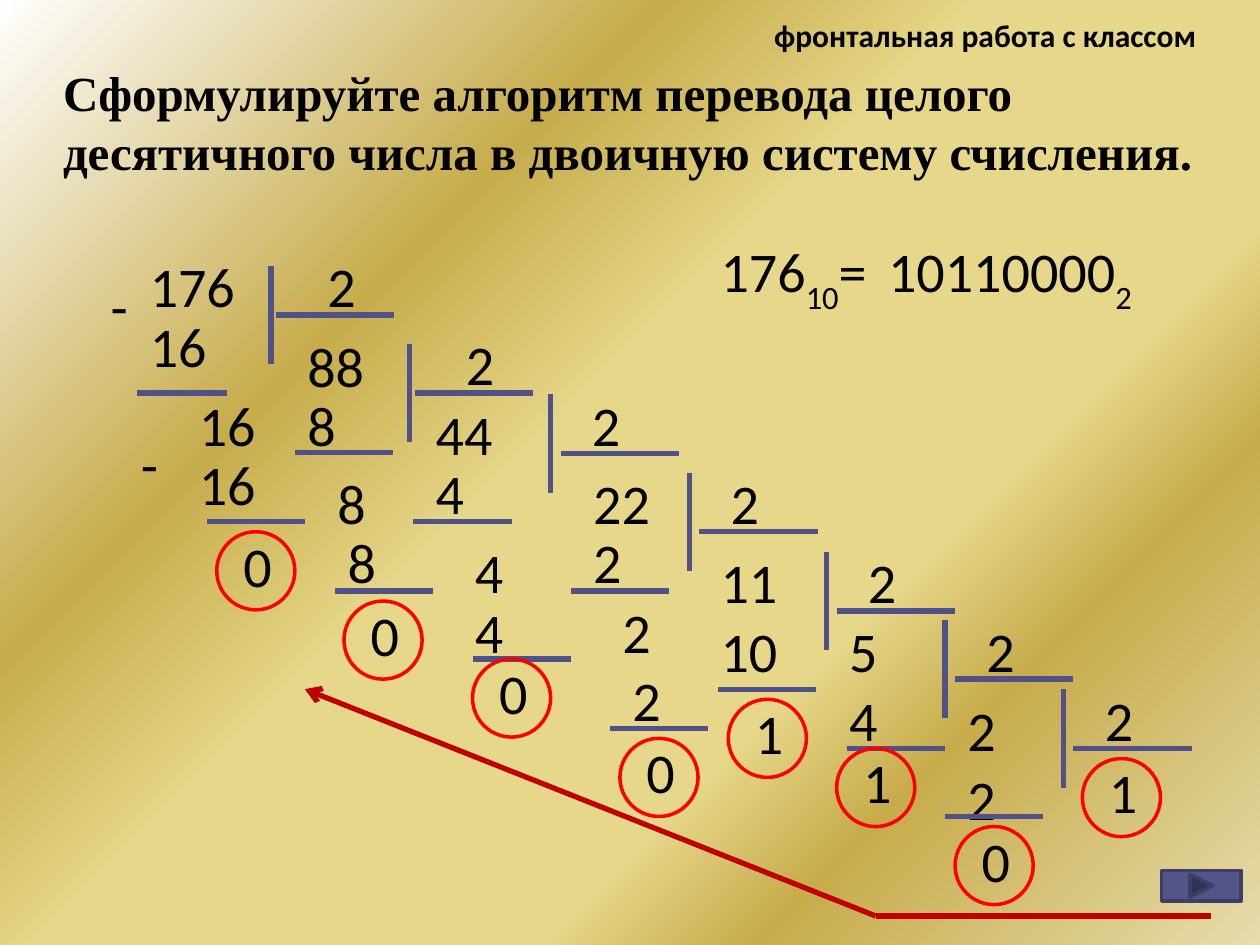
import pptx
import pptx.dml.color
import pptx.enum.shapes
import pptx.enum.text
import pptx.oxml
import pptx.oxml.ns
import pptx.util
from lxml import etree

Inches = pptx.util.Inches
Pt = pptx.util.Pt
ALIGN = pptx.enum.text.PP_ALIGN
ANCHOR = pptx.enum.text.MSO_ANCHOR
SHAPES = pptx.enum.shapes.MSO_SHAPE

COLORS = {
    "text": "000000", "rule": "505188", "ring": "FF0000", "arrow": "C00000",
    "button": "53548A", "button_line": "3D3E66",
    "white": "FFFFFF", "gold": "C7AC4C", "straw": "E6D78A", "sand": "E6DCAC",
}
BACKGROUND_STOPS = [(0, "white", 100), (30, "gold", 100), (45, "straw", 100),
                    (67, "straw", 42), (77, "gold", 100), (100, "sand", 100)]
DIGIT_WIDTH, DIGIT_HEIGHT, RULE_WIDTH, BAR_HEIGHT, RING_SIZE = 0.78, 0.64, 0.78, 0.78, 0.62
LONG_NUMBER_SIZE = 1.18

WIDE_CORNER = {"gap": 0.04, "drop": 0.39, "divisor": (0.35, -0.16)}
NARROW_CORNER = {"gap": 0.08, "drop": 0.47, "divisor": (0.23, -0.08)}
DIVISIONS = [
    {"at": (1.09, 1.95), "bar": (1.06, 0.16), "corner": WIDE_CORNER,
     "digits": [("176", 0, 0), ("16", 0, 0.47), ("16", 0.39, 1.1), ("16", 0.39, 1.57)],
     "minuses": [(-0.31, 0.16), (-0.07, 1.41)],
     "rules": [(0, 1.17, 0.71), (0.55, 2.19, RULE_WIDTH)], "remainder": ("0", 0.63, 2.27)},
    {"at": (2.34, 2.58), "bar": (0.91, 0.15), "corner": WIDE_CORNER,
     "digits": [("88", 0, 0), ("8", 0, 0.47), ("8", 0.24, 1.09), ("8", 0.32, 1.56)],
     "rules": [(0, 1.01, RULE_WIDTH), (0.32, 2.11, RULE_WIDTH)], "remainder": ("0", 0.39, 2.19)},
    {"at": (3.36, 3.12), "bar": (1.01, 0.01), "corner": NARROW_CORNER,
     "digits": [("44", 0, 0), ("4", 0, 0.47), ("4", 0.31, 1.1), ("4", 0.31, 1.57)],
     "rules": [(-0.08, 1.02, RULE_WIDTH), (0.39, 2.11, RULE_WIDTH)], "remainder": ("0", 0.39, 2.11)},
    {"at": (4.61, 3.67), "bar": (0.86, 0.08), "corner": NARROW_CORNER,
     "digits": [("22", 0, 0), ("2", 0, 0.47), ("2", 0.23, 1.02), ("2", 0.31, 1.56)],
     "rules": [(-0.08, 1.02, RULE_WIDTH), (0.23, 2.11, RULE_WIDTH)], "remainder": ("0", 0.31, 2.19)},
    {"at": (5.62, 4.3), "bar": (0.94, 0.08), "corner": NARROW_CORNER,
     "digits": [("11", 0, 0), ("10", 0, 0.54)],
     "rules": [(0.08, 1.17, RULE_WIDTH)], "remainder": ("1", 0.16, 1.25)},
    {"at": (6.64, 4.84), "bar": (0.86, 0.08), "corner": NARROW_CORNER,
     "digits": [("5", 0, 0), ("4", 0, 0.55)],
     "rules": [(0.08, 1.1, RULE_WIDTH)], "remainder": ("1", 0, 1.1)},
    {"at": (7.58, 5.47), "bar": (0.86, 0), "corner": NARROW_CORNER,
     "digits": [("2", 0, 0), ("2", 0, 0.55)],
     "rules": [(-0.08, 1.01, RULE_WIDTH)], "remainder": ("0", 0, 1.09)},
]


def rgb(name):
    """Return the named colour."""
    return pptx.dml.color.RGBColor.from_string(COLORS[name])


def write_text(shape, text, subscript="", suffix="", size=32, font="Calibri", bold=False,
               align=ALIGN.LEFT, anchor=ANCHOR.TOP, wrap=True, grow=True):
    """Write one formatted paragraph, optionally with a subscript and a suffix."""
    frame = shape.text_frame
    frame.word_wrap = wrap
    frame.vertical_anchor = anchor
    sizes = pptx.enum.text.MSO_AUTO_SIZE
    frame.auto_size = sizes.SHAPE_TO_FIT_TEXT if grow else sizes.NONE
    paragraph = frame.paragraphs[0]
    paragraph.alignment = align
    for part, baseline in ((text, 0), (subscript, -30000), (suffix, 0)):
        if part:
            run = paragraph.add_run()
            run.text = part
            run.font.size = Pt(size)
            run.font.name = font
            run.font.bold = bold
            run.font.color.rgb = rgb("text")
            if baseline:
                run._r.get_or_add_rPr().set("baseline", str(baseline))


def add_text(slide, text, left, top, width=DIGIT_WIDTH, height=DIGIT_HEIGHT, **text_format):
    """Add a text box with formatted text."""
    shape = slide.shapes.add_textbox(Inches(left), Inches(top), Inches(width), Inches(height))
    write_text(shape, text, **text_format)


def add_number(slide, digits, left, top):
    """Add a number in a box that is large enough to keep it on one line."""
    if len(digits) > 2:
        add_text(slide, digits, left, top, width=LONG_NUMBER_SIZE, height=LONG_NUMBER_SIZE)
    else:
        add_text(slide, digits, left, top)


def add_line(slide, start, end, color="rule", arrow=False):
    """Add a straight line, optionally with an arrowhead at its end."""
    line = slide.shapes.add_connector(pptx.enum.shapes.MSO_CONNECTOR.STRAIGHT,
                                      *(Inches(value) for value in (*start, *end)))
    line.line.color.rgb = rgb(color)
    line.line.width = Pt(3)
    if arrow:
        etree.SubElement(line.line._get_or_add_ln(), pptx.oxml.ns.qn("a:tailEnd"), type="arrow")
    etree.SubElement(line._element.spPr, pptx.oxml.ns.qn("a:effectLst"))


def add_ring(slide, digit, left, top):
    """Add a red ring around a binary digit."""
    ring = slide.shapes.add_shape(SHAPES.OVAL, Inches(left), Inches(top),
                                  Inches(RING_SIZE), Inches(RING_SIZE))
    ring.shadow.inherit = False
    ring.fill.background()
    ring.line.color.rgb = rgb("ring")
    ring.line.width = Pt(2)
    frame = ring.text_frame
    frame.margin_left, frame.margin_top = Inches(0.12), Inches(0.31)
    frame.margin_right, frame.margin_bottom = Inches(0.1), 0
    write_text(ring, digit, align=ALIGN.CENTER, anchor=ANCHOR.BOTTOM, grow=False)


def add_corner(slide, left, top, gap, drop, divisor):
    """Add the division corner with its divisor."""
    add_line(slide, (left, top), (left, top + BAR_HEIGHT))
    add_line(slide, (left + gap, top + drop), (left + gap + 0.94, top + drop))
    add_text(slide, "2", left + divisor[0], top + divisor[1], width=0.96)


def add_division(slide, division):
    """Add one step of the long division relative to its dividend."""
    left, top = division["at"]
    bar_x, bar_y = division["bar"]
    add_corner(slide, left + bar_x, top + bar_y, **division["corner"])
    for digits, x, y in division["digits"]:
        add_number(slide, digits, left + x, top + y)
    for x, y in division.get("minuses", []):
        add_text(slide, "-", left + x, top + y, width=0.35, wrap=False)
    for x, y, width in division["rules"]:
        add_line(slide, (left + x, top + y), (left + x + width, top + y))
    digit, x, y = division["remainder"]
    add_ring(slide, digit, left + x, top + y)


def set_background(slide):
    """Fill the background with the diagonal gold gradient."""
    fill = slide.background.fill
    fill.gradient()
    fill.gradient_angle = 315
    stops = slide._element.find(".//" + pptx.oxml.ns.qn("a:gsLst"))
    for stop in list(stops):
        stops.remove(stop)
    for position, color, opacity in BACKGROUND_STOPS:
        stop = etree.SubElement(stops, pptx.oxml.ns.qn("a:gs"), pos=str(position * 1000))
        tone = etree.SubElement(stop, pptx.oxml.ns.qn("a:srgbClr"), val=COLORS[color])
        if opacity < 100:
            etree.SubElement(tone, pptx.oxml.ns.qn("a:alpha"), val=str(opacity * 1000))


def add_heading(slide, left, top, width, height):
    """Place the title and the caption above it."""
    title = slide.shapes.title
    title.left, title.top = Inches(left), Inches(top)
    title.width, title.height = Inches(width), Inches(height)
    write_text(title, "Сформулируйте алгоритм перевода целого десятичного числа в двоичную систему счисления.",
               size=28, font="Times New Roman", bold=True, anchor=ANCHOR.MIDDLE)
    add_text(slide, "фронтальная работа с классом", left + 5.23, 0, width=4.38, height=0.55,
             size=18, bold=True, align=ALIGN.CENTER, anchor=ANCHOR.MIDDLE, grow=False)


def add_equation(slide, left, top):
    """Add the decimal number and its binary form."""
    add_text(slide, "176", left, top, width=1.42, subscript="10", suffix="=",
             anchor=ANCHOR.MIDDLE, wrap=False)
    add_text(slide, "10110000", left + 1.33, top, width=2.18, subscript="2",
             anchor=ANCHOR.MIDDLE, wrap=False)


def add_reading_arrow(slide, left, top, width, height):
    """Add the bent arrow that shows the reading order of the remainders."""
    bend = (left + 4.53, top + height)
    add_line(slide, bend, (left, top), color="arrow", arrow=True)
    add_line(slide, (left + width, top + height), bend, color="arrow")


def add_next_button(slide, left, top, width, height):
    """Add the forward button."""
    button = slide.shapes.add_shape(SHAPES.ACTION_BUTTON_FORWARD_OR_NEXT, Inches(left), Inches(top),
                                    Inches(width), Inches(height))
    button.shadow.inherit = False
    button.fill.solid()
    button.fill.fore_color.rgb = rgb("button")
    button.line.color.rgb = rgb("button_line")
    button.line.width = Pt(2)


def main():
    """Build and save the slide."""
    presentation = pptx.Presentation()
    presentation.slide_width, presentation.slide_height = Inches(10), Inches(7.5)
    slide = presentation.slides.add_slide(presentation.slide_layouts[5])
    set_background(slide)
    add_heading(slide, 0.4, 0.44, 9.38, 1.04)
    add_equation(slide, 5.62, 1.87)
    for division in DIVISIONS:
        add_division(slide, division)
    add_ring(slide, "1", 8.59, 6.02)
    add_reading_arrow(slide, 2.42, 5.47, 7.19, 1.8)
    add_next_button(slide, 9.22, 6.91, 0.63, 0.24)
    presentation.save("out.pptx")


if __name__ == "__main__":
    main()
